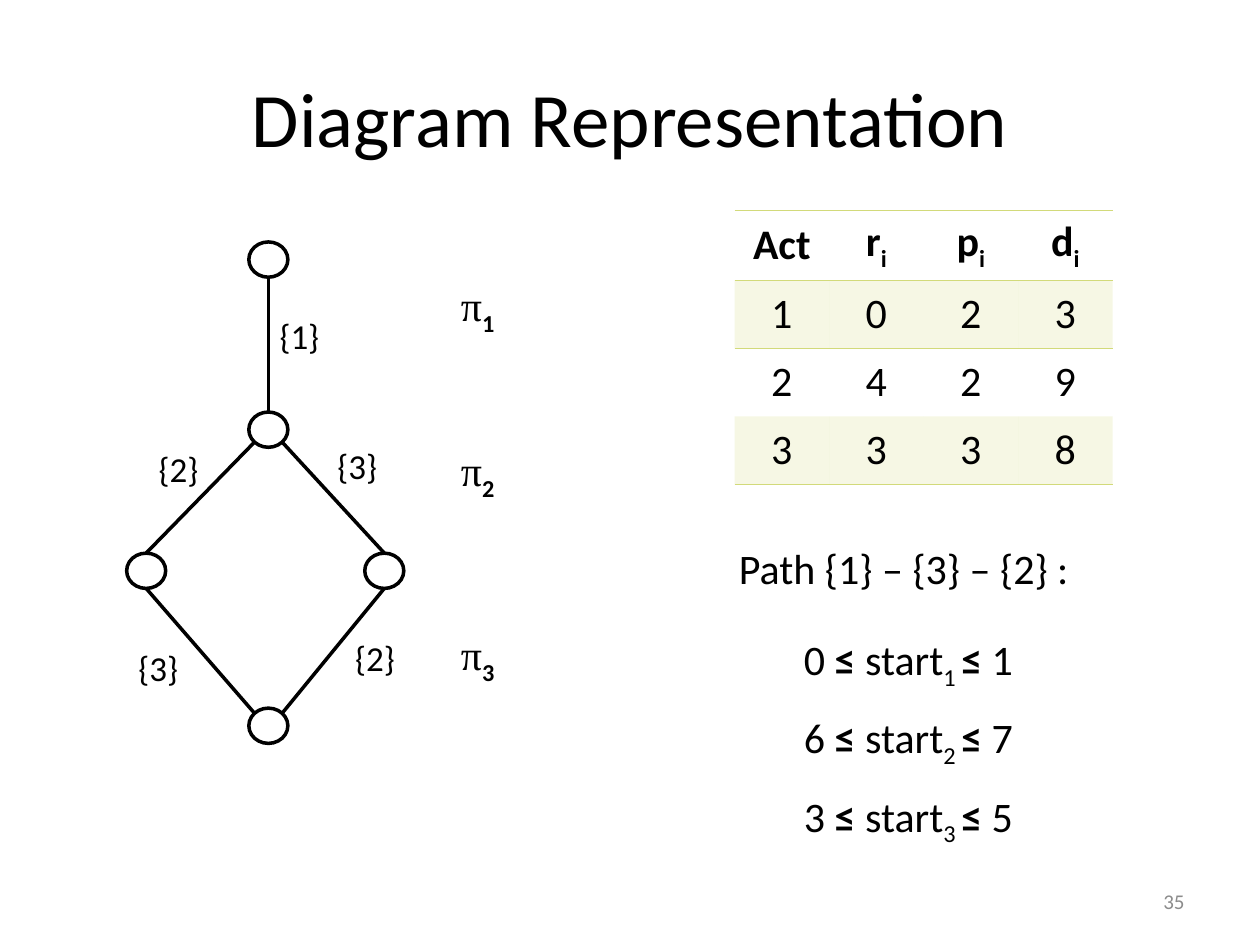
import math

import pptx
import pptx.dml.color
import pptx.enum.shapes
import pptx.enum.text
import pptx.oxml
import pptx.oxml.ns
import pptx.util

Inches = pptx.util.Inches
Pt = pptx.util.Pt
Align = pptx.enum.text.PP_ALIGN
Middle = pptx.enum.text.MSO_ANCHOR.MIDDLE

COLORS = {"ink": "000000", "paper": "FFFFFF", "lime": "D2DA7A", "gray": "8C8C8C"}
NO_STYLE = "{2D5ABB26-0587-4C30-8999-92F81FD0307C}"


def rgb(name):
    return pptx.dml.color.RGBColor.from_string(COLORS[name])


def node(tag, **attrs):
    item = pptx.oxml.parse_xml(f"<a:{tag} {pptx.oxml.ns.nsdecls('a')}/>")
    for key, value in attrs.items():
        item.set(key, str(value))
    return item


def write(para, text, size=24, font="Calibri", color="ink", bold=False, sub=False):
    run = para.add_run()
    run.text = text
    run.font.size = Pt(size)
    run.font.name = font
    run.font.bold = bold
    run.font.color.rgb = rgb(color)
    if sub:
        run.font._element.set("baseline", "-25000")


class Deck:
    line = Pt(2)
    radii = (0.155, 0.14)

    def __init__(self):
        self.show = pptx.Presentation()
        self.show.slide_width = Inches(10)
        self.show.slide_height = Inches(7.5)
        self.slide = self.show.slides.add_slide(self.show.slide_layouts[6])
        self.shapes = self.slide.shapes

    def box(self, left, top, width, height, wrap=True, anchor=None):
        area = map(Inches, (left, top, width, height))
        frame = self.shapes.add_textbox(*area).text_frame
        frame.word_wrap = wrap
        if anchor is not None:
            frame.vertical_anchor = anchor
        return frame

    def label(self, area, text, align=Align.LEFT, wrap=True, anchor=None, **style):
        para = self.box(*area, wrap=wrap, anchor=anchor).paragraphs[0]
        para.alignment = align
        write(para, text, **style)
        return para

    def state(self, x, y):
        rx, ry = self.radii
        area = map(Inches, (x - rx, y - ry, 2 * rx, 2 * ry))
        oval = self.shapes.add_shape(pptx.enum.shapes.MSO_SHAPE.OVAL, *area)
        oval.shadow.inherit = False
        oval.fill.solid()
        oval.fill.fore_color.rgb = rgb("paper")
        oval.line.color.rgb = rgb("ink")
        oval.line.width = self.line

    def edge(self, start, out, end, into):
        """Join two states at rim angles, in degrees clockwise from the right."""
        ends = []
        for (x, y), angle in ((start, out), (end, into)):
            turn = math.radians(angle)
            ends.append(Inches(x + self.radii[0] * math.cos(turn)))
            ends.append(Inches(y + self.radii[1] * math.sin(turn)))
        kind = pptx.enum.shapes.MSO_CONNECTOR.STRAIGHT
        link = self.shapes.add_connector(kind, *ends)
        link.line.color.rgb = rgb("ink")
        link.line.width = self.line
        link._element.spPr.append(node("effectLst"))

    def rule(self, cell, side):
        """Draw one horizontal border; side is lnT or lnB."""
        border = node(side, w=Pt(1))
        fill = node("solidFill")
        fill.append(node("srgbClr", val=COLORS["lime"]))
        border.append(fill)
        props = cell._tc.get_or_add_tcPr()
        props.insert(len(props.findall(pptx.oxml.ns.qn("a:lnT"))), border)

    def table(self, left, top, col, row, heads, rows):
        count, width = len(rows) + 1, len(heads)
        area = map(Inches, (left, top, col * width, row * count))
        grid = self.shapes.add_table(count, width, *area).table
        grid.first_row = grid.horz_banding = False
        grid._tbl.tblPr.find(pptx.oxml.ns.qn("a:tableStyleId")).text = NO_STYLE
        for r, values in enumerate([heads, *rows]):
            for c, value in enumerate(values):
                cell = grid.cell(r, c)
                cell.vertical_anchor = Middle
                para = cell.text_frame.paragraphs[0]
                para.alignment = Align.CENTER
                name, _, mark = value.partition("_")
                write(para, name, bold=r == 0)
                if mark:
                    write(para, mark, bold=True, sub=True)
                if r % 2:
                    cell.fill.solid()
                    cell.fill.fore_color.rgb = rgb("lime")
                    tint = cell._tc.tcPr.find(".//" + pptx.oxml.ns.qn("a:srgbClr"))
                    tint.append(node("alpha", val=20000))
                else:
                    cell.fill.background()
                if r < 2:
                    self.rule(cell, "lnT")
                if r in (0, count - 1):
                    self.rule(cell, "lnB")

    def bounds(self, area, title, ranges):
        frame = self.box(*area)
        head = frame.paragraphs[0]
        head.alignment = Align.CENTER
        head.space_after = Pt(17)
        write(head, title)
        for act, (low, high) in enumerate(ranges, 1):
            para = frame.add_paragraph()
            para.alignment = Align.CENTER
            para.space_before = para.space_after = Pt(6)
            write(para, f"{low} ")
            write(para, "≤ ", bold=True)
            write(para, "start")
            write(para, f"{act} ", sub=True)
            write(para, "≤ ", bold=True)
            write(para, str(high))


def main():
    deck = Deck()
    deck.label((0.5, 0.3, 9, 1.25), "Diagram Representation",
               align=Align.CENTER, anchor=Middle, size=44)

    root, fork, sink = [(2.13, y) for y in (2.06, 3.41, 5.76)]
    left, right = (1.16, 4.53), (3.05, 4.53)
    for link in (
        (root, 90, fork, 270),
        (fork, 135, left, 270),
        (fork, 45, right, 270),
        (left, 90, sink, 225),
        (right, 90, sink, 315),
    ):
        deck.edge(*link)
    for spot in (root, fork, left, right, sink):
        deck.state(*spot)

    for x, y, act in ((2.12, 2.45, 1), (1.16, 3.5, 2), (2.58, 3.48, 3),
                      (1, 5.08, 3), (2.72, 5, 2)):
        deck.label((x, y, 0.61, 0.44), f"{{{act}}}", wrap=False, size=20)
    for layer, y in enumerate((2.17, 3.48, 4.94), 1):
        para = deck.label((3.56, y, 0.5, 0.5), "π", wrap=False,
                          font="Times New Roman")
        write(para, str(layer), bold=True, sub=True)

    deck.table(5.83, 1.67, 0.75, 0.54, ("Act", "r_i", "p_i", "d_i"),
               ("1023", "2429", "3338"))
    deck.bounds((5.17, 4.26, 4.08, 3.06), "Path {1} – {3} – {2} : ",
                ((0, 1), (6, 7), (3, 5)))
    deck.label((7.17, 6.95, 2.33, 0.4), "35", align=Align.RIGHT,
               anchor=Middle, size=12, color="gray")
    deck.show.save("out.pptx")


if __name__ == "__main__":
    main()
